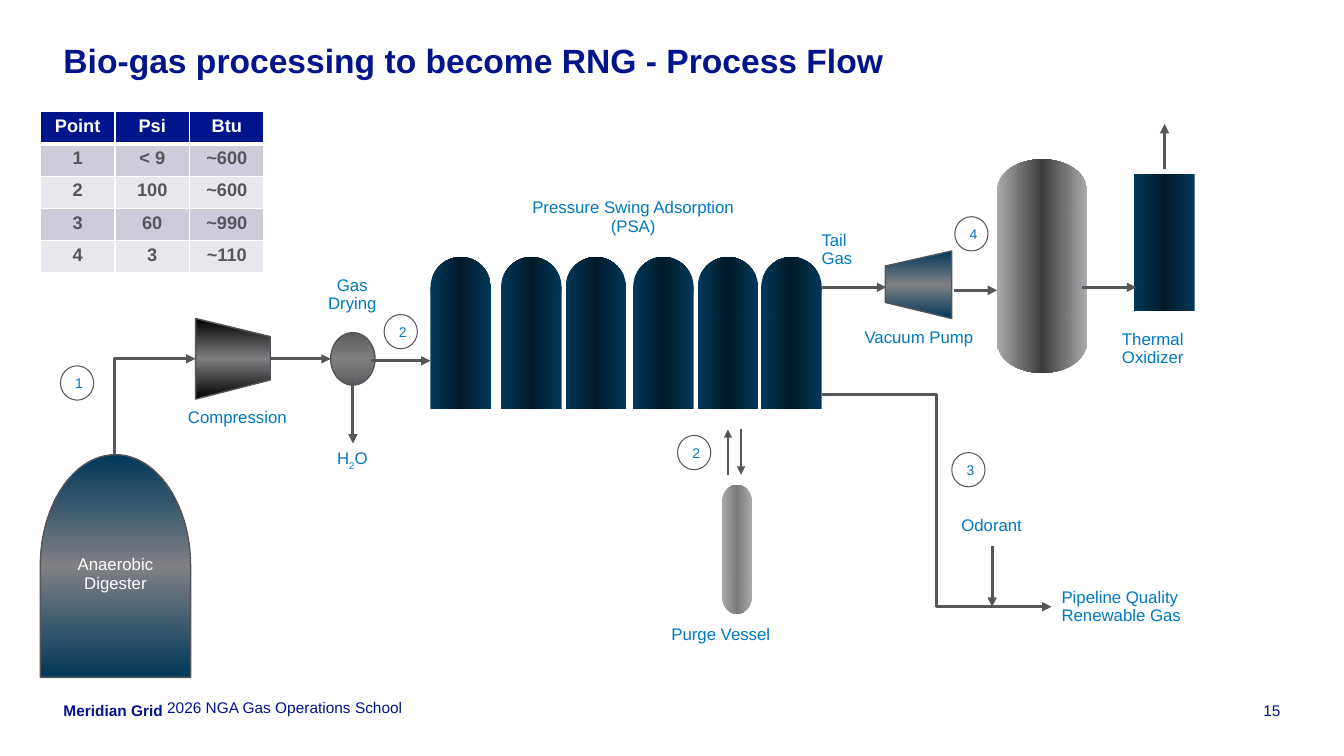
from copy import deepcopy
from dataclasses import dataclass

from lxml import etree
from pptx import Presentation
from pptx.dml.color import RGBColor
from pptx.enum.shapes import MSO_CONNECTOR, MSO_SHAPE
from pptx.enum.text import MSO_ANCHOR, PP_ALIGN
from pptx.oxml.ns import qn
from pptx.util import Pt

EMU_PER_PX = 9144
LEFT, CENTER, RIGHT = PP_ALIGN.LEFT, PP_ALIGN.CENTER, PP_ALIGN.RIGHT
TOP, MIDDLE, BOTTOM = MSO_ANCHOR.TOP, MSO_ANCHOR.MIDDLE, MSO_ANCHOR.BOTTOM
RECTANGLE, OVAL = MSO_SHAPE.RECTANGLE, MSO_SHAPE.OVAL
DELAY, BADGE = MSO_SHAPE.FLOWCHART_DELAY, MSO_SHAPE.FLOWCHART_CONNECTOR
STRAIGHT, ELBOW = MSO_CONNECTOR.STRAIGHT, MSO_CONNECTOR.ELBOW
NAVY, BLUE, GRAY, WHITE = "00148C", "0079C1", "55555A", "FFFFFF"
BAND_DARK, BAND_LIGHT = "CCCCDA", "E7E7EE"
TOWER_SHADES = ("003859", "001A29")
MACHINE_SHADES = ("003859", "808083")
TANK_SHADES = ("AAAAAC", "3B3B3B")
PURGE_SHADES = ("AAAAAC", "7A7A7B")
ACROSS, DOWN = 0, 90


@dataclass
class Vessel:
    left: int
    top: int
    width: int
    height: int
    shades: tuple[str, str]
    cap_height: int = 0
    cap_tops: tuple[int, ...] = ()


@dataclass
class Machine:
    points: list[tuple[int, int]]
    shades: tuple[str, str]


@dataclass
class Pipe:
    start: tuple[int, int]
    end: tuple[int, int]
    weight: float = 2.25
    kind: int = STRAIGHT


@dataclass
class Label:
    text: str
    left: int
    top: int
    width: int
    height: int
    align: int = CENTER
    anchor: int = TOP
    color: str = BLUE
    size: int = 12
    bold: bool = False
    spacing: float = 0.9
    subscript: str = ""
    inset: bool = True


@dataclass
class Marker:
    number: str
    left: int
    top: int


VESSELS = [
    *(Vessel(left, 285, 60, 121, TOWER_SHADES, 60, (255,)) for left in (427, 497, 561, 628, 692, 755)),
    Vessel(1125, 173, 60, 136, TOWER_SHADES),
    Vessel(716, 501, 30, 92, PURGE_SHADES, 35, (574, 481)),
    Vessel(989, 185, 89, 161, TANK_SHADES, 60, (310, 158)),
]
MACHINES = [
    Machine([(194, 316), (268, 334), (268, 377), (194, 396)], ("000000", "808083")),
    Machine([(944, 316), (878, 300), (878, 264), (944, 249)], MACHINE_SHADES),
]
PIPES = [
    Pipe((114, 451), (194, 356), kind=ELBOW),
    Pipe((268, 356), (328, 356)),
    Pipe((350, 379), (350, 440)),
    Pipe((368, 358), (427, 358)),
    Pipe((815, 285), (879, 285)),
    Pipe((946, 288), (989, 288)),
    Pipe((1073, 285), (1127, 285)),
    Pipe((1155, 168), (1155, 123)),
    Pipe((815, 391), (1043, 602), kind=ELBOW),
    Pipe((984, 542), (984, 602)),
    Pipe((722, 471), (722, 426), 1.5),
    Pipe((735, 426), (735, 471), 1.5),
]
LABELS = [
    Label("Bio-gas processing to become RNG - Process Flow", 63, 40, 903, 40, LEFT,
          color=NAVY, size=24, bold=True, spacing=1, inset=False),
    Label("Thermal Oxidizer", 1103, 316, 104, 60, LEFT, MIDDLE),
    Label("Pressure Swing Adsorption\n(PSA)", 485, 193, 286, 56),
    Label("Purge Vessel", 656, 614, 149, 36, LEFT, spacing=1),
    Label("Odorant", 924, 508, 119, 34),
    Label("Pipeline Quality Renewable Gas", 1043, 572, 179, 60, LEFT, MIDDLE),
    Label("H2O", 310, 440, 79, 34, subscript="2"),
    Label("Gas\nDrying", 278, 270, 143, 55),
    Label("Tail Gas", 805, 225, 70, 55, LEFT),
    Label("Anaerobic Digester", 50, 547, 129, 55, color=WHITE),
    Label("Compression", 159, 401, 153, 34),
    Label("Vacuum Pump", 835, 321, 153, 55),
    Label("Meridian Grid", 63, 695, 133, 19, LEFT, BOTTOM, NAVY, 11, True, 1, inset=False),
    Label("2026 NGA Gas Operations School", 156, 688, 300, 19, LEFT, TOP, NAVY, 11, spacing=1),
    Label("15", 1192, 695, 78, 19, RIGHT, BOTTOM, NAVY, 11, spacing=1, inset=False),
]
MARKERS = [Marker("1", 60, 363), Marker("3", 944, 449), Marker("2", 381, 312),
           Marker("2", 672, 432), Marker("4", 947, 215)]
READINGS = [("Point", "Psi", "Btu"), ("1", "< 9", "~600"), ("2", "100", "~600"),
            ("3", "60", "~990"), ("4", "3", "~110")]


def px(*lengths: int) -> list[int]:
    return [round(length * EMU_PER_PX) for length in lengths]


def rgb(color: str) -> RGBColor:
    return RGBColor.from_string(color)


def write_text(frame, text: str, *, size: int, color: str, align: int = CENTER,
               bold: bool = False, spacing: float = 1, subscript: str = "") -> None:
    for index, line in enumerate(text.split("\n")):
        para = frame.add_paragraph() if index else frame.paragraphs[0]
        para.alignment = align
        para.line_spacing = spacing
        for part in line.partition(subscript) if subscript else (line,):
            span = para.add_run()
            span.text = part
            span.font.name = "Arial"
            span.font.size = Pt(size)
            span.font.bold = bold
            span.font.color.rgb = rgb(color)
            if subscript and part == subscript:
                span.font._element.set("baseline", "-25000")


def shade(shape, shades: tuple[str, str], angle: int, outlined: bool = False) -> None:
    shape.shadow.inherit = False
    shape.fill.gradient()
    stop_list = shape.element.spPr.find(".//" + qn("a:gsLst"))
    stop_list.append(deepcopy(stop_list[0]))
    edge, middle = shades
    for stop, color, position in zip(shape.fill.gradient_stops, (edge, middle, edge), (0, 0.5, 1)):
        stop.color.rgb = rgb(color)
        stop.position = position
    shape.fill.gradient_angle = angle
    if outlined:
        shape.line.color.rgb = rgb(GRAY)
        shape.line.width = Pt(1)
    else:
        shape.line.fill.background()


def draw_vessel(page, vessel: Vessel) -> None:
    body = page.shapes.add_shape(RECTANGLE, *px(vessel.left, vessel.top, vessel.width, vessel.height))
    shade(body, vessel.shades, ACROSS)
    for cap_top in vessel.cap_tops:
        cap = page.shapes.add_shape(OVAL, *px(vessel.left, cap_top, vessel.width, vessel.cap_height))
        shade(cap, vessel.shades, ACROSS)


def draw_machine(page, machine: Machine) -> None:
    builder = page.shapes.build_freeform(*machine.points[0], scale=EMU_PER_PX)
    builder.add_line_segments(machine.points[1:], close=True)
    shade(builder.convert_to_shape(), machine.shades, DOWN, outlined=True)


def draw_pipe(page, pipe: Pipe) -> None:
    (x1, y1), (x2, y2) = pipe.start, pipe.end
    rises = pipe.kind == ELBOW and y2 < y1
    if rises:
        middle_x, middle_y = (x1 + x2) / 2, (y1 + y2) / 2
        half_run, half_rise = (x2 - x1) / 2, (y1 - y2) / 2
        x1, x2 = middle_x + half_rise, middle_x - half_rise
        y1, y2 = middle_y + half_run, middle_y - half_run
    connector = page.shapes.add_connector(pipe.kind, *px(x1, y1, x2, y2))
    connector.line.color.rgb = rgb(GRAY)
    connector.line.width = Pt(pipe.weight)
    properties = connector.element.spPr
    if rises:
        properties.find(qn("a:xfrm")).set("rot", "5400000")
        properties.find(qn("a:prstGeom")).set("prst", "bentConnector2")
    etree.SubElement(properties.find(qn("a:ln")), qn("a:tailEnd"), type="triangle")
    etree.SubElement(properties, qn("a:effectLst"))


def draw_label(page, label: Label) -> None:
    frame = page.shapes.add_textbox(*px(label.left, label.top, label.width, label.height)).text_frame
    frame.word_wrap = True
    frame.vertical_anchor = label.anchor
    if not label.inset:
        frame.margin_left = frame.margin_top = frame.margin_right = frame.margin_bottom = 0
    write_text(frame, label.text, size=label.size, color=label.color, align=label.align,
               bold=label.bold, spacing=label.spacing, subscript=label.subscript)


def draw_marker(page, marker: Marker) -> None:
    circle = page.shapes.add_shape(BADGE, *px(marker.left, marker.top, 33, 34))
    circle.shadow.inherit = False
    circle.fill.background()
    circle.line.color.rgb = rgb(GRAY)
    circle.line.width = Pt(0.75)
    circle.text_frame.vertical_anchor = MIDDLE
    write_text(circle.text_frame, marker.number, size=10, color=BLUE)


def set_borders(cell, header: bool, below_header: bool) -> None:
    properties = cell._tc.get_or_add_tcPr()
    weights = {"lnL": 1, "lnR": 1, "lnT": 3 if below_header else 1, "lnB": 3 if header else 1}
    for index, (side, weight) in enumerate(weights.items()):
        border = etree.Element(qn(f"a:{side}"), w=str(Pt(weight)))
        fill = etree.SubElement(border, qn("a:solidFill"))
        etree.SubElement(fill, qn("a:srgbClr"), val=WHITE)
        properties.insert(index, border)


def draw_readings(page) -> None:
    table = page.shapes.add_table(5, 3, *px(40, 111, 222, 160)).table
    table.horz_banding = False
    for row, values in enumerate(READINGS):
        for column, value in enumerate(values):
            cell = table.cell(row, column)
            cell.margin_left, cell.margin_right, cell.margin_top, cell.margin_bottom = px(7, 7, 4, 4)
            cell.fill.solid()
            cell.fill.fore_color.rgb = rgb((BAND_DARK if row % 2 else BAND_LIGHT) if row else NAVY)
            set_borders(cell, row == 0, row == 1)
            write_text(cell.text_frame, value, size=13, color=GRAY if row else WHITE, bold=True)


def main() -> None:
    deck = Presentation()
    deck.slide_width, deck.slide_height = px(1333, 750)
    page = deck.slides.add_slide(deck.slide_layouts[6])
    draw_readings(page)
    digester = page.shapes.add_shape(DELAY, *px(4, 487, 221, 149))
    digester.rotation = 270
    shade(digester, MACHINE_SHADES, ACROSS, outlined=True)
    dryer = page.shapes.add_shape(OVAL, *px(328, 330, 44, 52))
    shade(dryer, ("5C5C5E", "808083"), DOWN, outlined=True)
    for items, draw in ((VESSELS, draw_vessel), (MACHINES, draw_machine), (PIPES, draw_pipe),
                        (LABELS, draw_label), (MARKERS, draw_marker)):
        for item in items:
            draw(page, item)
    deck.save("out.pptx")


if __name__ == "__main__":
    main()
